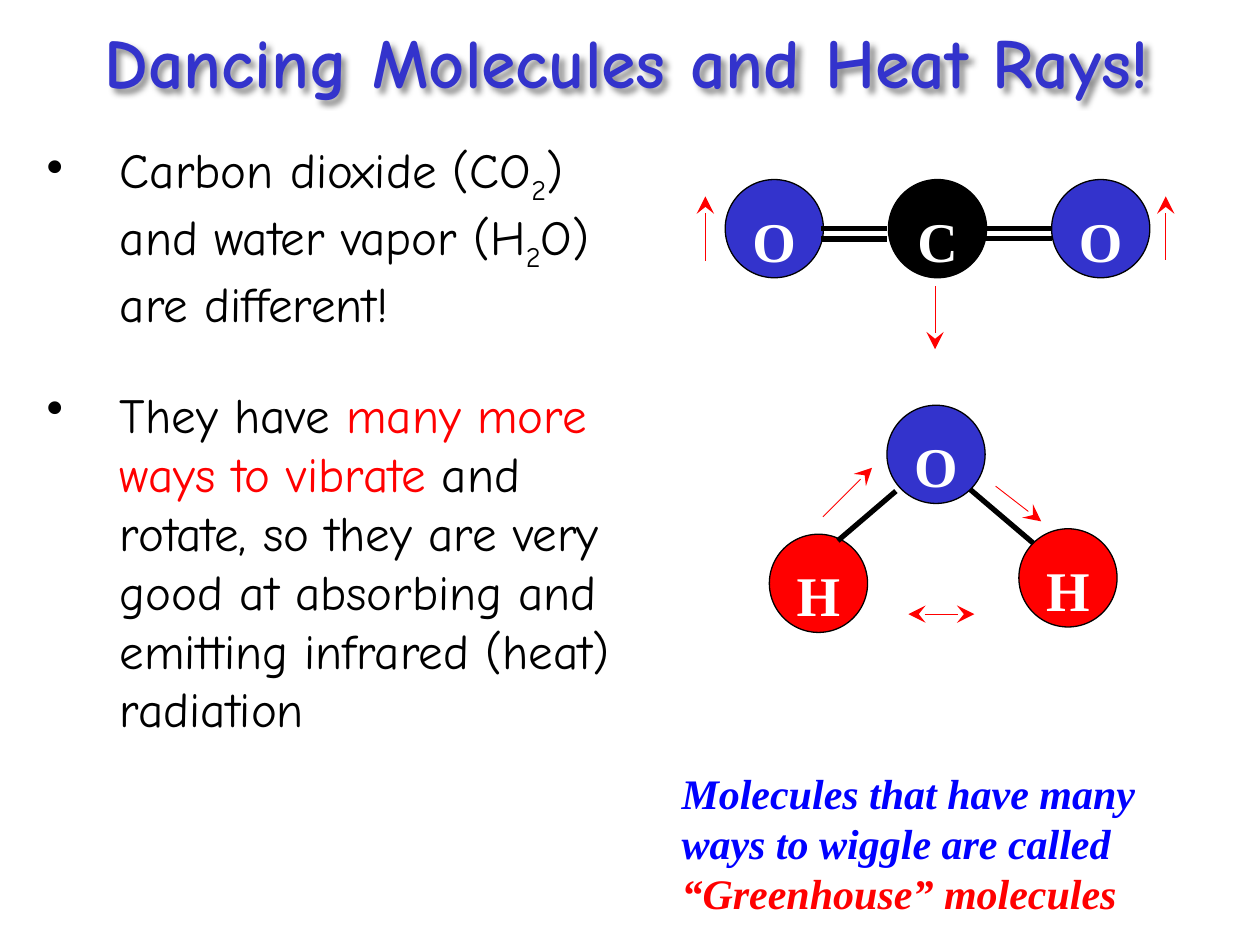
import pptx
import pptx.util
import pptx.dml.color
import pptx.enum.shapes
import pptx.enum.text
import pptx.oxml

Cm, Pt = pptx.util.Cm, pptx.util.Pt
ALIGN = pptx.enum.text.PP_ALIGN
ANCHOR = pptx.enum.text.MSO_ANCHOR
SHAPE = pptx.enum.shapes.MSO_SHAPE
NS = 'xmlns:a="http://schemas.openxmlformats.org/drawingml/2006/main"'

BLUE, RED, BLACK, WHITE = "3333CC", "FF0000", "000000", "FFFFFF"
COMIC, TIMES = "Comic Neue", "Times New Roman"

# Content: text pieces are (text, colour, is subscript)
TITLE = "Dancing Molecules and Heat Rays!"
POINTS = [
    [("Carbon dioxide (CO", BLACK, False), ("2", BLACK, True),
     (") and water vapor (H", BLACK, False), ("2", BLACK, True),
     ("O) are different!\v", BLACK, False)],
    [("They have ", BLACK, False), ("many more ways to vibrate ", RED, False),
     ("and rotate, so they are very good at absorbing and emitting "
      "infrared (heat) radiation", BLACK, False)],
]
CAPTION = [("Molecules that have many ways to wiggle are called ", "0000FF", False),
           ("“Greenhouse” molecules", RED, False)]

# Positions in centimetres
ATOM_SIZE = 1.98
ATOMS = [  # letter, fill, left, top
    ("O", BLUE, 14.62, 3.62), ("O", BLUE, 21.2, 3.62), ("C", BLACK, 17.91, 3.62),
    ("H", RED, 15.51, 10.77), ("H", RED, 20.54, 10.66), ("O", BLUE, 17.88, 8.17),
]
BONDS = [  # start x, y, end x, y
    (16.55, 4.6, 17.89, 4.6), (16.55, 4.82, 17.89, 4.82),
    (19.86, 4.61, 21.2, 4.61), (19.86, 4.81, 21.2, 4.81),
    (16.89, 10.9, 18.06, 9.9), (19.56, 9.87, 20.83, 10.95),
]
MOTIONS = [  # start x, y, end x, y, ends with an arrowhead
    (18.31, 12.38, 19.64, 12.38, ("headEnd", "tailEnd")),
    (14.22, 5.26, 14.22, 3.96, ("tailEnd",)),
    (23.5, 5.24, 23.5, 3.96, ("tailEnd",)),
    (18.85, 5.77, 18.85, 7.04, ("tailEnd",)),
    (16.59, 10.42, 17.58, 9.43, ("tailEnd",)),
    (20.07, 9.8, 20.99, 10.51, ("tailEnd",)),
]


def colour(value):
    return pptx.dml.color.RGBColor.from_string(value)


def add_xml(parent, xml):
    parent.append(pptx.oxml.parse_xml(xml))


def style(span, font, size, value, bold=False, italic=False):
    span.font.name, span.font.size = font, Pt(size)
    span.font.bold, span.font.italic = bold, italic
    span.font.color.rgb = colour(value)


def fill_paragraph(para, pieces, font, size, **weight):
    para.text = "".join(text for text, _, _ in pieces) if len(pieces) == 1 else ""
    for text, value, subscript in pieces:
        span = para.add_run()
        span.text = text.rstrip("\v")
        style(span, font, size, value, **weight)
        if subscript:
            span.font._element.set("baseline", "-25000")
        if text.endswith("\v"):
            para.add_line_break()


def add_box(page, left, top, width, height):
    box = page.shapes.add_textbox(Cm(left), Cm(top), Cm(width), Cm(height))
    box.text_frame.word_wrap = True
    return box


def add_line(page, ends, value, width, heads=()):
    line = page.shapes.add_connector(
        pptx.enum.shapes.MSO_CONNECTOR.STRAIGHT, *[Cm(end) for end in ends])
    line.line.color.rgb = colour(value)
    line.line.width = Pt(width)
    for head in heads:
        add_xml(line.line._get_or_add_ln(),
                f'<a:{head} {NS} type="stealth" w="lg" len="lg"/>')
    add_xml(line._element.spPr, f"<a:effectLst {NS}/>")


deck = pptx.Presentation()
deck.slide_width, deck.slide_height = Cm(25.4), Cm(19.05)
page = deck.slides.add_slide(deck.slide_layouts[6])

# Title with a soft shadow
box = add_box(page, 0.36, 0.43, 24.56, 1.6)
box.text_frame.vertical_anchor = ANCHOR.MIDDLE
para = box.text_frame.paragraphs[0]
para.text = TITLE
para.alignment = ALIGN.CENTER
style(para.runs[0], COMIC, 40, BLUE, bold=True)
add_xml(box._element.spPr,
        f'<a:effectLst {NS}><a:outerShdw blurRad="38100" dist="38100" dir="2700000">'
        '<a:srgbClr val="000000"><a:alpha val="43000"/></a:srgbClr>'
        '</a:outerShdw></a:effectLst>')

# Bulleted points
frame = add_box(page, 0.69, 2.69, 12.57, 14.94).text_frame
for number, pieces in enumerate(POINTS):
    para = frame.add_paragraph() if number else frame.paragraphs[0]
    fill_paragraph(para, pieces, COMIC, 28)
    para.space_before = Pt(8.4)
    props = para._p.get_or_add_pPr()
    props.set("marL", str(Cm(1.48)))
    props.set("indent", str(-Cm(1.48)))
    add_xml(props, f'<a:buChar {NS} char="•"/>')

# Caption
frame = add_box(page, 13.49, 15.34, 10.59, 3.33).text_frame
fill_paragraph(frame.paragraphs[0], CAPTION, TIMES, 24, bold=True, italic=True)

# Atoms
for letter, fill, left, top in ATOMS:
    atom = page.shapes.add_shape(SHAPE.OVAL, Cm(left), Cm(top), Cm(ATOM_SIZE), Cm(ATOM_SIZE))
    atom.shadow.inherit = False
    atom.fill.solid()
    atom.fill.fore_color.rgb = colour(fill)
    atom.line.color.rgb = colour(BLACK)
    atom.line.width = Pt(0.75)
    frame = atom.text_frame
    frame.text = letter
    frame.word_wrap = False
    frame.vertical_anchor = ANCHOR.TOP
    frame.margin_left = frame.margin_right = frame.margin_bottom = 0
    frame.margin_top = Cm(0.25)
    frame.paragraphs[0].alignment = ALIGN.CENTER
    style(frame.paragraphs[0].runs[0], TIMES, 32, WHITE, bold=True)

# Bonds and vibration arrows
for ends in BONDS:
    add_line(page, ends, BLACK, 3)
for *ends, heads in MOTIONS:
    add_line(page, ends, RED, 0.5, heads)

deck.save("out.pptx")
